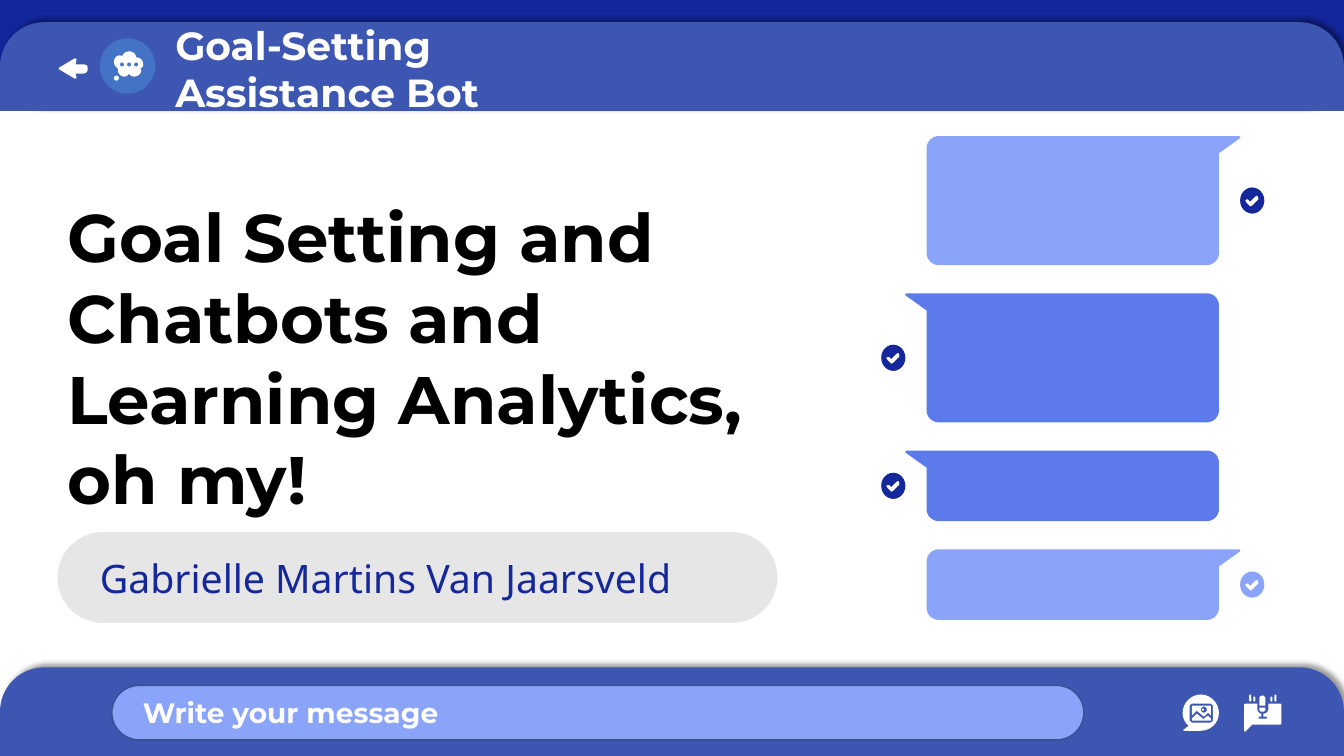
from math import cos, radians, sin

from lxml.etree import SubElement
from pptx import Presentation
from pptx.dml.color import RGBColor
from pptx.enum.shapes import MSO_SHAPE
from pptx.enum.text import MSO_ANCHOR, MSO_AUTO_SIZE, PP_ALIGN
from pptx.oxml.ns import qn
from pptx.util import Inches, Pt

WHITE = RGBColor(0xFF, 0xFF, 0xFF)
BLACK = RGBColor(0, 0, 0)
NAVY = RGBColor(0x13, 0x26, 0x9B)
INK = RGBColor(0x14, 0x27, 0x9B)
BAR = RGBColor(0x3D, 0x56, 0xB2)
BAR_EDGE = RGBColor(0x32, 0x54, 0x91)
LIGHT = RGBColor(0x8A, 0xA4, 0xF9)
MEDIUM = RGBColor(0x5C, 0x7A, 0xEA)
AVATAR = RGBColor(0x44, 0x72, 0xC4)
GREY = RGBColor(0xE6, 0xE6, 0xE6)

# Content
BOT_NAME = "Goal-Setting Assistance Bot"
TITLE = "Goal Setting and Chatbots and Learning Analytics, oh my!"
AUTHOR = "Gabrielle Martins Van Jaarsveld"
PROMPT = "Write your message"

WIDTH, BAR_H = 13.33, 0.88

# Chat bubbles: top, height, tail side, fill, check colour
BUBBLES = [
    (1.35, 1.28, "right", LIGHT, INK),
    (2.91, 1.28, "left", MEDIUM, INK),
    (4.47, 0.70, "left", MEDIUM, INK),
    (5.45, 0.70, "right", LIGHT, LIGHT),
]
BODY_L, BODY_R, CORNER = 9.19, 12.09, 0.12
MIDDLE = (BODY_L + BODY_R) / 2
CHECK_REACH = 1.78  # from the middle of a bubble to its check

# Outlines: a pair is a corner, six numbers are a Bezier curve
CHECK = [(0.05, -0.05), (0.06, -0.03), (0.06, -0.01), (0, 0.05), (-0.02, 0.06),
         (-0.03, 0.05), (-0.06, 0.02), (-0.07, 0), (-0.06, -0.01),
         (-0.05, -0.01), (-0.04, -0.01), (-0.02, 0.01), (0.03, -0.04)]
BACK_ARROW = [(0.59, 0.67), (0.58, 0.68, 0.58, 0.69, 0.59, 0.69), (0.74, 0.78),
              (0.76, 0.78, 0.76, 0.77, 0.76, 0.77), (0.75, 0.73), (0.83, 0.73),
              (0.85, 0.73, 0.87, 0.71, 0.87, 0.69), (0.87, 0.67),
              (0.87, 0.65, 0.85, 0.64, 0.83, 0.64), (0.75, 0.64), (0.76, 0.59),
              (0.76, 0.59, 0.75, 0.58, 0.74, 0.58)]
CLOUD = [(1.28, 0.51), (1.25, 0.51, 1.22, 0.53, 1.21, 0.56),
         (1.21, 0.56, 1.2, 0.55, 1.19, 0.55), (1.15, 0.55, 1.13, 0.58, 1.13, 0.62),
         (1.13, 0.64, 1.15, 0.67, 1.17, 0.68), (1.17, 0.68, 1.17, 0.69, 1.17, 0.7),
         (1.17, 0.73, 1.2, 0.76, 1.23, 0.76), (1.25, 0.76, 1.27, 0.75, 1.28, 0.73),
         (1.29, 0.75, 1.31, 0.76, 1.33, 0.76), (1.37, 0.76, 1.4, 0.73, 1.4, 0.7),
         (1.4, 0.69, 1.4, 0.69, 1.39, 0.68), (1.41, 0.67, 1.42, 0.66, 1.42, 0.64),
         (1.42, 0.6, 1.39, 0.57, 1.36, 0.57), (1.35, 0.57),
         (1.35, 0.54, 1.32, 0.51, 1.28, 0.51)]
PHOTO_BUBBLE = [(11.91, 6.89), (11.81, 6.89, 11.73, 6.98, 11.73, 7.07),
                (11.73, 7.12, 11.75, 7.17, 11.79, 7.2), (11.74, 7.24),
                (11.73, 7.24, 11.74, 7.25, 11.75, 7.25), (11.91, 7.25),
                (12.01, 7.25, 12.09, 7.17, 12.09, 7.07),
                (12.09, 6.98, 12.01, 6.89, 11.91, 6.89)]
PHOTO_SKY = [(11.82, 7), (11.82, 7.1), (11.86, 7.06), (11.87, 7.05), (11.88, 7.06),
             (11.94, 7.11), (11.97, 7.08), (11.98, 7.07), (12.01, 7.1), (12.01, 7)]
PHOTO_HILLS = [(11.87, 7.08), (11.82, 7.13), (11.82, 7.15), (12.01, 7.15),
               (12.01, 7.13), (11.98, 7.1), (11.94, 7.13),
               (11.94, 7.14, 11.93, 7.14, 11.93, 7.13)]
VOICE_BUBBLE = [(12.35, 6.98), (12.34, 6.99), (12.34, 7.25), (12.35, 7.26),
                (12.36, 7.25), (12.42, 7.19), (12.7, 7.19), (12.71, 7.18),
                (12.71, 6.99), (12.7, 6.98), (12.58, 6.98), (12.58, 7.03),
                (12.58, 7.06, 12.56, 7.08, 12.53, 7.08), (12.53, 7.11), (12.56, 7.11),
                (12.57, 7.11, 12.57, 7.13, 12.56, 7.13), (12.49, 7.13),
                (12.48, 7.13, 12.48, 7.11, 12.49, 7.11), (12.51, 7.11), (12.51, 7.08),
                (12.49, 7.08, 12.47, 7.06, 12.47, 7.03), (12.47, 6.98)]
SOUND_RAYS = [(12.39, 6.89), (12.43, 6.91), (12.60, 6.91), (12.64, 6.89)]
RAY_BOTTOM = 6.96

prs = Presentation()
prs.slide_width, prs.slide_height = Inches(WIDTH), Inches(7.5)
s = prs.slides.add_slide(prs.slide_layouts[0])


def arc(cx, cy, rx, ry, start=0, end=360, steps=24):
    angles = [radians(start + (end - start) * i / steps) for i in range(steps + 1)]
    return [(cx + rx * cos(a), cy + ry * sin(a)) for a in angles]


def flatten(outline, steps=8):
    pts = []
    for seg in outline:
        if len(seg) == 2:
            pts.append(seg)
            continue
        ends = [pts[-1], seg[0:2], seg[2:4], seg[4:6]]
        for t in (i / steps for i in range(1, steps + 1)):
            weights = ((1 - t) ** 3, 3 * t * (1 - t) ** 2, 3 * t * t * (1 - t), t ** 3)
            pts.append(tuple(sum(w * e[k] for w, e in zip(weights, ends)) for k in (0, 1)))
    return pts


def paint(sp, fill, line=None):
    sp.shadow.inherit = False
    sp.fill.solid()
    sp.fill.fore_color.rgb = fill
    if line:
        sp.line.color.rgb, sp.line.width = line, Pt(1)
    else:
        sp.line.fill.background()
    return sp


def outline(fill, *contours):
    fb = None
    for contour in contours:
        pts = [(Inches(x), Inches(y)) for x, y in flatten(contour)]
        if fb is None:
            fb = s.shapes.build_freeform(*pts[0], scale=1.0)
        else:
            fb.move_to(*pts[0])
        fb.add_line_segments(pts[1:], close=True)
    return paint(fb.convert_to_shape(), fill)


def shape(kind, x, y, w, h, fill, line=None, radius=None):
    sp = s.shapes.add_shape(kind, Inches(x), Inches(y), Inches(w), Inches(h))
    if radius is not None:
        sp.adjustments[0] = radius
    return paint(sp, fill, line)


def write(text, x, y, w, h, size=28, color=WHITE, font="Montserrat", bold=True,
          anchor=MSO_ANCHOR.TOP, sp=None):
    box = [Inches(v) for v in (x, y, w, h)]
    if sp is None:
        sp = s.shapes.add_textbox(*box)
    sp.left, sp.top, sp.width, sp.height = box
    sp.element.getparent().append(sp.element)  # bring to front
    tf = sp.text_frame
    tf.word_wrap, tf.auto_size, tf.vertical_anchor = True, MSO_AUTO_SIZE.NONE, anchor
    tf.margin_left = tf.margin_right = tf.margin_top = tf.margin_bottom = Inches(0.1)
    p = tf.paragraphs[0]
    p.alignment, p.space_before = PP_ALIGN.LEFT, Pt(0)
    r = p.add_run()
    r.text = text
    r.font.name, r.font.size, r.font.bold = font, Pt(size), bold
    r.font.color.rgb = color


def bar(top):
    sp = shape(MSO_SHAPE.ROUNDED_RECTANGLE, 0, top, WIDTH, BAR_H, BAR, radius=0.5)
    effects = sp.element.spPr.find(qn("a:effectLst"))
    shadow = SubElement(effects, qn("a:outerShdw"), blurRad=str(Pt(4)), dist=str(Pt(3)),
                        dir=str(315 * 60000), algn="bl", rotWithShape="0")
    black = SubElement(shadow, qn("a:srgbClr"), val="000000")
    SubElement(black, qn("a:alpha"), val="40000")
    shape(MSO_SHAPE.RECTANGLE, 0, top + BAR_H / 2, WIDTH, BAR_H / 2, BAR)


# Footer and header bars
bar(6.62)
shape(MSO_SHAPE.RECTANGLE, 0, 0, WIDTH, 0.87, NAVY)
bar(0.22)
outline(WHITE, BACK_ARROW)
write(BOT_NAME, 1.64, 0.41, 4.78, 0.54, anchor=MSO_ANCHOR.MIDDLE)

# Chat bubbles with their checks
for top, height, side, fill, check_color in BUBBLES:
    tip, low = BODY_L - 0.21, top + height - CORNER
    left, right = BODY_L + CORNER, BODY_R - CORNER
    pts = [(tip + 0.01, top), (tip, top + 0.01), (tip, top + 0.02), (BODY_L, top + 0.17)]
    pts += arc(left, low, CORNER, CORNER, 180, 90, 8)
    pts += arc(right, low, CORNER, CORNER, 90, 0, 8)
    pts += arc(right, top + CORNER, CORNER, CORNER, 0, -90, 8)
    turn = -1 if side == "right" else 1
    outline(fill, [(MIDDLE + turn * (x - MIDDLE), y) for x, y in pts])
    cx, cy = MIDDLE - turn * CHECK_REACH, top + height / 2
    outline(check_color, arc(cx, cy, 0.12, 0.13), [(cx + x, cy + y) for x, y in CHECK])

# Title and author
shape(MSO_SHAPE.ROUNDED_RECTANGLE, 0.57, 5.28, 7.14, 0.9, GREY, radius=0.5)
write(TITLE, 0.57, 1.84, 7.14, 2.98, size=48, color=BLACK, sp=s.shapes.title)
write(AUTHOR, 0.89, 5.46, 6.5, 0.54, color=INK, font="Noto Sans", bold=False,
      anchor=MSO_ANCHOR.MIDDLE, sp=s.placeholders[1])

# Voice icon
for x, y in SOUND_RAYS:
    shape(MSO_SHAPE.ROUNDED_RECTANGLE, x, y, 0.02, RAY_BOTTOM - y, WHITE, radius=0.5)
outline(WHITE, VOICE_BUBBLE)
shape(MSO_SHAPE.ROUND_2_SAME_RECTANGLE, 12.49, 6.9, 0.06, 0.1, WHITE, radius=0.5)
shape(MSO_SHAPE.ROUND_2_SAME_RECTANGLE, 12.49, 7.02, 0.06, 0.04, WHITE, radius=0.5).rotation = 180

# Photo icon
outline(WHITE, PHOTO_BUBBLE, [(11.82, 6.98), (12.01, 6.98), (12.03, 7), (12.03, 7.15),
                              (12.01, 7.17), (11.82, 7.17), (11.8, 7.15), (11.8, 7)])
outline(WHITE, PHOTO_SKY, arc(11.94, 7.04, 0.03, 0.03))
shape(MSO_SHAPE.OVAL, 11.92, 7.03, 0.02, 0.02, WHITE)
outline(WHITE, PHOTO_HILLS)

# Message field
shape(MSO_SHAPE.ROUNDED_RECTANGLE, 1.11, 6.8, 9.64, 0.54, LIGHT, line=BAR_EDGE, radius=0.5)
write(PROMPT, 1.32, 6.8, 3.73, 0.47, size=20)

# Bot avatar
shape(MSO_SHAPE.OVAL, 0.99, 0.38, 0.55, 0.55, AVATAR)
shape(MSO_SHAPE.OVAL, 1.13, 0.75, 0.05, 0.05, WHITE)
outline(WHITE, CLOUD, *[arc(1.21 + 0.07 * i, 0.64, 0.02, 0.02) for i in range(3)])

prs.save("out.pptx")
